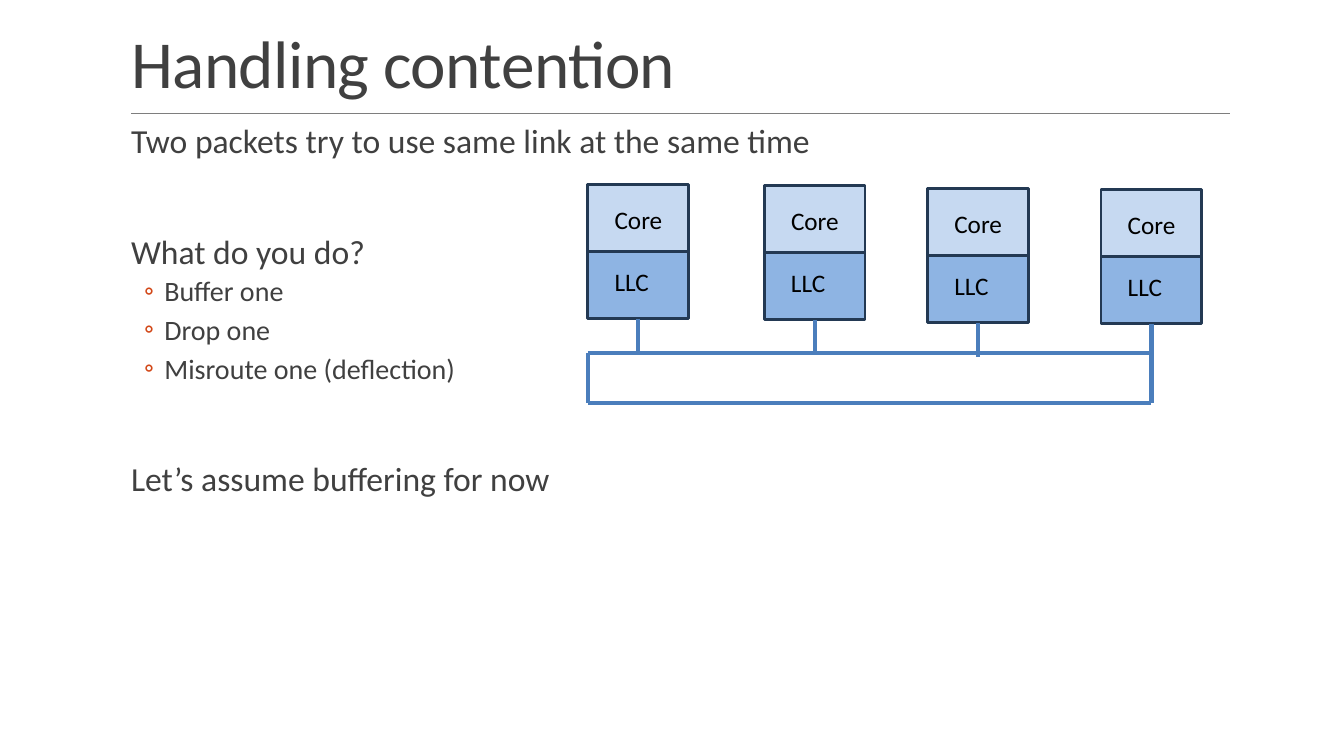
from lxml import etree
from pptx import Presentation
from pptx import util as u
from pptx.dml.color import RGBColor
from pptx.enum import shapes, text
from pptx.oxml.ns import qn

INK = RGBColor(0x40, 0x40, 0x40)
BLACK = RGBColor(0, 0, 0)
RULE = RGBColor(0x7E, 0x7E, 0x7E)
BULLET = RGBColor(0xD2, 0x47, 0x17)
WIRE = RGBColor(0x4B, 0x7E, 0xBC)
EDGE = RGBColor(0x23, 0x39, 0x53)
CORE = RGBColor(0xC6, 0xD9, 0xF1)
CACHE = RGBColor(0x8E, 0xB4, 0xE3)

TITLE = "Handling contention"
BODY = [
    ("Two packets try to use same link at the same time", dict(before=1)),
    ("What do you do?", dict(before=50.5)),
    ("Buffer one", dict(size=20, before=1.8, bullet="◦")),
    ("Drop one", dict(size=20, before=3.6, bullet="◦")),
    ("Misroute one (deflection)", dict(size=20, before=3.6, bullet="◦")),
    ("Let’s assume buffering for now", dict(before=52)),
]
LAYERS = [("Core", CORE, 0.75, 0.15), ("LLC", CACHE, 0.66, 0.1)]
TILES = [(5.83, 1.83), (7.58, 1.84), (9.2, 1.87), (10.92, 1.88)]
TILE_W, LAYER_H, STEM = 1, 0.667, 0.34
RING_LEFT, RING_TOP, RING_BOTTOM = TILES[0][0], 3.5, 4
RING_RIGHT = TILES[-1][0] + TILE_W / 2
MARGIN = 1.29


def add_text(tf, content, size=24, color=INK, before=0, bullet=None, spacing=0):
    p = tf.paragraphs[0] if not tf.text else tf.add_paragraph()
    p.space_before = u.Pt(before)
    r = p.add_run()
    r.text = content
    r.font.size, r.font.name = u.Pt(size), "Calibri"
    r.font.color.rgb = color
    if spacing:
        r.font._element.set("spc", str(int(spacing * 100)))
    if bullet:
        pPr = p._p.get_or_add_pPr()
        pPr.set("marL", str(u.Inches(0.33)))
        pPr.set("indent", str(u.Inches(-0.2)))
        clr = etree.SubElement(pPr, qn("a:buClr"))
        etree.SubElement(clr, qn("a:srgbClr"), val=str(BULLET))
        etree.SubElement(pPr, qn("a:buFont"), typeface="Calibri")
        etree.SubElement(pPr, qn("a:buChar"), char=bullet)


def add_box(s, x, y, w, h, inset=None, wrap=True):
    tf = s.shapes.add_textbox(*map(u.Inches, (x, y, w, h))).text_frame
    tf.word_wrap = wrap
    tf.auto_size = text.MSO_AUTO_SIZE.SHAPE_TO_FIT_TEXT
    if inset:
        tf.margin_left, tf.margin_top, tf.margin_right, tf.margin_bottom = map(u.Inches, inset)
    return tf


def add_line(s, x1, y1, x2, y2, color=WIRE, width=3):
    ends = map(u.Inches, (x1, y1, x2, y2))
    line = s.shapes.add_connector(shapes.MSO_CONNECTOR.STRAIGHT, *ends)
    line.line.color.rgb, line.line.width = color, u.Pt(width)
    etree.SubElement(line._element.spPr, qn("a:effectLst"))


def add_tile(s, x, y, stem_end):
    for i, (label, fill, width, drop) in enumerate(LAYERS):
        top = y + i * LAYER_H
        sp = s.shapes.add_shape(shapes.MSO_SHAPE.RECTANGLE,
                                *map(u.Inches, (x, top, TILE_W, LAYER_H)))
        sp.shadow.inherit = False
        sp.fill.solid()
        sp.fill.fore_color.rgb = fill
        sp.line.color.rgb, sp.line.width = EDGE, u.Pt(2)
        tf = add_box(s, x + TILE_W / 6, top + drop, width, 0.4, wrap=False)
        add_text(tf, label, size=18, color=BLACK)
    middle = x + TILE_W / 2
    add_line(s, middle, y + 2 * LAYER_H, middle, stem_end)


def main():
    """Build the slide on link contention in a ring of cores."""
    prs = Presentation()
    prs.slide_width, prs.slide_height = u.Inches(13.33), u.Inches(7.5)
    s = prs.slides.add_slide(prs.slide_layouts[6])

    add_line(s, 1.3, 1.12, 12.2, 1.12, RULE, 0.48)
    inset = (0.01, 0.01, 0, 0)
    add_text(add_box(s, MARGIN, 0.2, 10.76, 0.83, inset), TITLE, size=48, before=1, spacing=-0.4)
    tf = add_box(s, MARGIN, 1.18, 6.76, 3.8, inset)
    for content, style in BODY:
        add_text(tf, content, **style)

    add_line(s, RING_LEFT, RING_TOP, RING_RIGHT, RING_TOP)
    for x, y in TILES:
        is_last = x == TILES[-1][0]
        add_tile(s, x, y, RING_BOTTOM if is_last else y + 2 * LAYER_H + STEM)
    add_line(s, RING_LEFT, RING_BOTTOM, RING_RIGHT, RING_BOTTOM)
    add_line(s, RING_LEFT, RING_TOP, RING_LEFT, RING_BOTTOM)
    prs.save("out.pptx")


if __name__ == "__main__":
    main()
